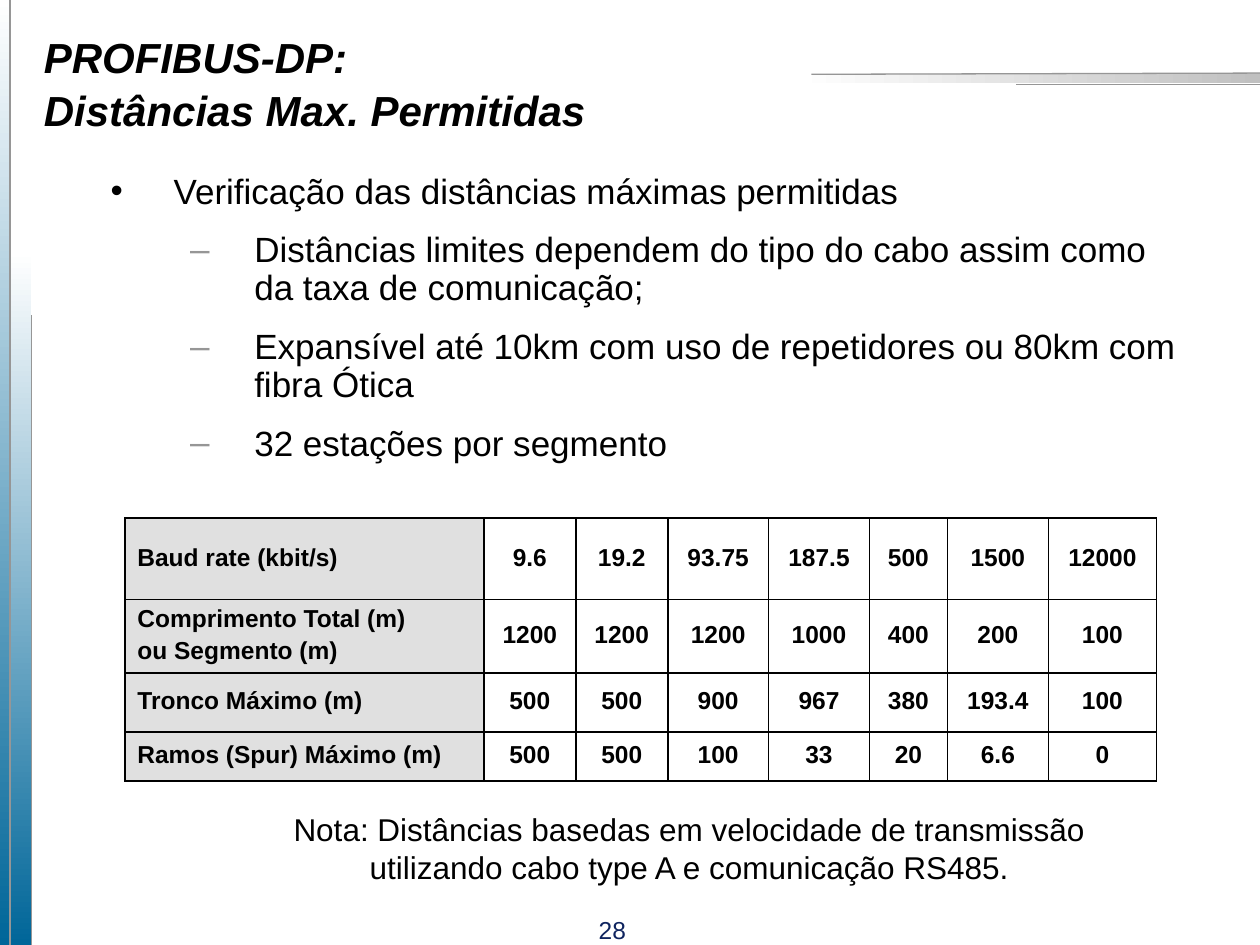
from lxml import etree
from pptx import Presentation
from pptx.dml.color import RGBColor
from pptx.enum.shapes import MSO_CONNECTOR, MSO_SHAPE
from pptx.enum.text import MSO_ANCHOR, PP_ALIGN
from pptx.oxml.ns import qn
from pptx.util import Inches, Pt

LEFT, CENTER = PP_ALIGN.LEFT, PP_ALIGN.CENTER
TOP, MIDDLE = MSO_ANCHOR.TOP, MSO_ANCHOR.MIDDLE
RECTANGLE = MSO_SHAPE.RECTANGLE
STRAIGHT = MSO_CONNECTOR.STRAIGHT

FONT = "Arial"
COLORS = {
    "text": "000000",
    "white": "FFFFFF",
    "blue": "006699",
    "silver": "C0C0C0",
    "rule": "969696",
    "number": "0F245F",
    "label": "E0E0E0",
}
DOWN, RIGHT = 270, 0

BULLETS = [
    (0, "Verificação das distâncias máximas permitidas"),
    (1, "Distâncias limites dependem do tipo do cabo assim como da taxa de comunicação;"),
    (1, "Expansível até 10km com uso de repetidores ou 80km com fibra Ótica"),
    (1, "32 estações por segmento"),
]
# Per level: character, colour, text indent, hanging first line
BULLET_STYLES = [("•", "text", 0.5, -0.5), ("–", "rule", 1.14, -0.51)]

COLUMN_WIDTHS = [2.85, 0.73, 0.73, 0.8, 0.8, 0.62, 0.8, 0.86]
ROW_HEIGHTS = [0.65, 0.58, 0.47, 0.39]
ROWS = [
    ["Baud rate (kbit/s)", "9.6", "19.2", "93.75", "187.5", "500", "1500", "12000"],
    ["Comprimento Total (m)\nou Segmento (m)",
     "1200", "1200", "1200", "1000", "400", "200", "100"],
    ["Tronco Máximo (m)", "500", "500", "900", "967", "380", "193.4", "100"],
    ["Ramos (Spur) Máximo (m)", "500", "500", "100", "33", "20", "6.6", "0"],
]


def rgb(name):
    return RGBColor.from_string(COLORS[name])


def add_solid(parent, color):
    fill = etree.SubElement(parent, qn("a:solidFill"))
    etree.SubElement(fill, qn("a:srgbClr"), val=COLORS[color])


def add_bullet(para, level):
    character, color, indent, hanging = BULLET_STYLES[level]
    para.level = level
    properties = para._p.get_or_add_pPr()
    properties.set("marL", str(Inches(indent)))
    properties.set("indent", str(Inches(hanging)))
    bullet_color = etree.SubElement(properties, qn("a:buClr"))
    etree.SubElement(bullet_color, qn("a:srgbClr"), val=COLORS[color])
    etree.SubElement(properties, qn("a:buFont"), typeface=FONT)
    etree.SubElement(properties, qn("a:buChar"), char=character)


def write(frame, text, size, color="text", bold=False, italic=False, align=LEFT,
          line_spacing=None, before=0, after=0, levels=None):
    """Fill a text frame, one paragraph for each line of the text."""
    for index, line in enumerate(text.split("\n")):
        para = frame.add_paragraph() if index else frame.paragraphs[0]
        if levels:
            add_bullet(para, levels[index])
        para.alignment = align
        if line_spacing:
            para.line_spacing = line_spacing
        para.space_before = Pt(before if index else 0)
        para.space_after = Pt(after)
        span = para.add_run()
        span.text = line
        span.font.name = FONT
        span.font.size = Pt(size)
        span.font.bold = bold
        span.font.italic = italic
        span.font.color.rgb = rgb(color)


def add_text(page, left, top, width, height, text, size, anchor=TOP, **style):
    box = page.shapes.add_textbox(Inches(left), Inches(top), Inches(width), Inches(height))
    box.text_frame.word_wrap = True
    box.text_frame.vertical_anchor = anchor
    write(box.text_frame, text, size, **style)


def add_gradient_bar(page, left, top, width, height, color, direction):
    """Add a bar that runs from white to the colour."""
    bar = page.shapes.add_shape(
        RECTANGLE, Inches(left), Inches(top), Inches(width), Inches(height))
    bar.shadow.inherit = False
    bar.line.fill.background()
    bar.fill.gradient()
    bar.fill.gradient_angle = direction
    for stop, name, position in zip(bar.fill.gradient_stops, ("white", color), (0, 1)):
        stop.color.rgb = rgb(name)
        stop.position = position


def add_rule(page, x1, y1, x2, y2):
    rule = page.shapes.add_connector(
        STRAIGHT, Inches(x1), Inches(y1), Inches(x2), Inches(y2))
    rule.line.color.rgb = rgb("rule")
    rule.line.width = Pt(0.75)
    etree.SubElement(rule._element.spPr, qn("a:effectLst"))


def add_borders(cell):
    properties = cell._tc.get_or_add_tcPr()
    for side in ("lnL", "lnR", "lnT", "lnB"):
        border = etree.SubElement(properties, qn(f"a:{side}"), w=str(Pt(1)))
        add_solid(border, "text")


def add_distance_table(page, left, top):
    frame = page.shapes.add_table(
        len(ROWS), len(COLUMN_WIDTHS), Inches(left), Inches(top),
        Inches(sum(COLUMN_WIDTHS)), Inches(sum(ROW_HEIGHTS)))
    table = frame.table
    table.first_row = table.horz_banding = False
    for column, width in zip(table.columns, COLUMN_WIDTHS):
        column.width = Inches(width)
    for row, height, values in zip(table.rows, ROW_HEIGHTS, ROWS):
        row.height = Inches(height)
        for index, (cell, value) in enumerate(zip(row.cells, values)):
            add_borders(cell)
            if index:
                cell.fill.background()
            else:
                cell.fill.solid()
                cell.fill.fore_color.rgb = rgb("label")
            cell.vertical_anchor = MIDDLE
            write(cell.text_frame, value, 14, bold=True, line_spacing=0.9, after=4,
                  align=CENTER if index else LEFT)


def add_decoration(page):
    add_gradient_bar(page, 0, 0, 0.08, 7.5, "blue", DOWN)
    add_rule(page, 0.25, 2.5, 0.25, 7.5)
    add_gradient_bar(page, 6.33, 0.58, 3.67, 0.08, "silver", RIGHT)
    add_rule(page, 10, 0.67, 8.06, 0.67)
    add_rule(page, 10, 0.58, 6.44, 0.59)
    add_gradient_bar(page, 0.08, 2, 0.17, 5.5, "blue", DOWN)
    add_rule(page, 0.08, 0, 0.08, 7.5)


def main():
    deck = Presentation()
    deck.slide_width, deck.slide_height = Inches(10), Inches(7.5)
    page = deck.slides.add_slide(deck.slide_layouts[6])
    add_decoration(page)
    add_text(page, 4.54, 7.21, 0.64, 0.33, "28", 14, color="number", align=CENTER)
    add_text(page, 0.25, 0.17, 7.09, 0.98, "PROFIBUS-DP:\nDistâncias Max. Permitidas", 24,
             anchor=MIDDLE, bold=True, italic=True, before=1.5)
    levels, lines = zip(*BULLETS)
    add_text(page, 0.78, 1.33, 8.74, 1.92, "\n".join(lines), 20,
             levels=levels, line_spacing=0.9, before=6, after=6)
    add_distance_table(page, 0.99, 4.11)
    add_text(page, 1.93, 6.38, 7.08, 0.7,
             "Nota: Distâncias basedas em velocidade de transmissão utilizando cabo "
             "type A e comunicação RS485.", 18, align=CENTER)
    deck.save("out.pptx")


if __name__ == "__main__":
    main()
